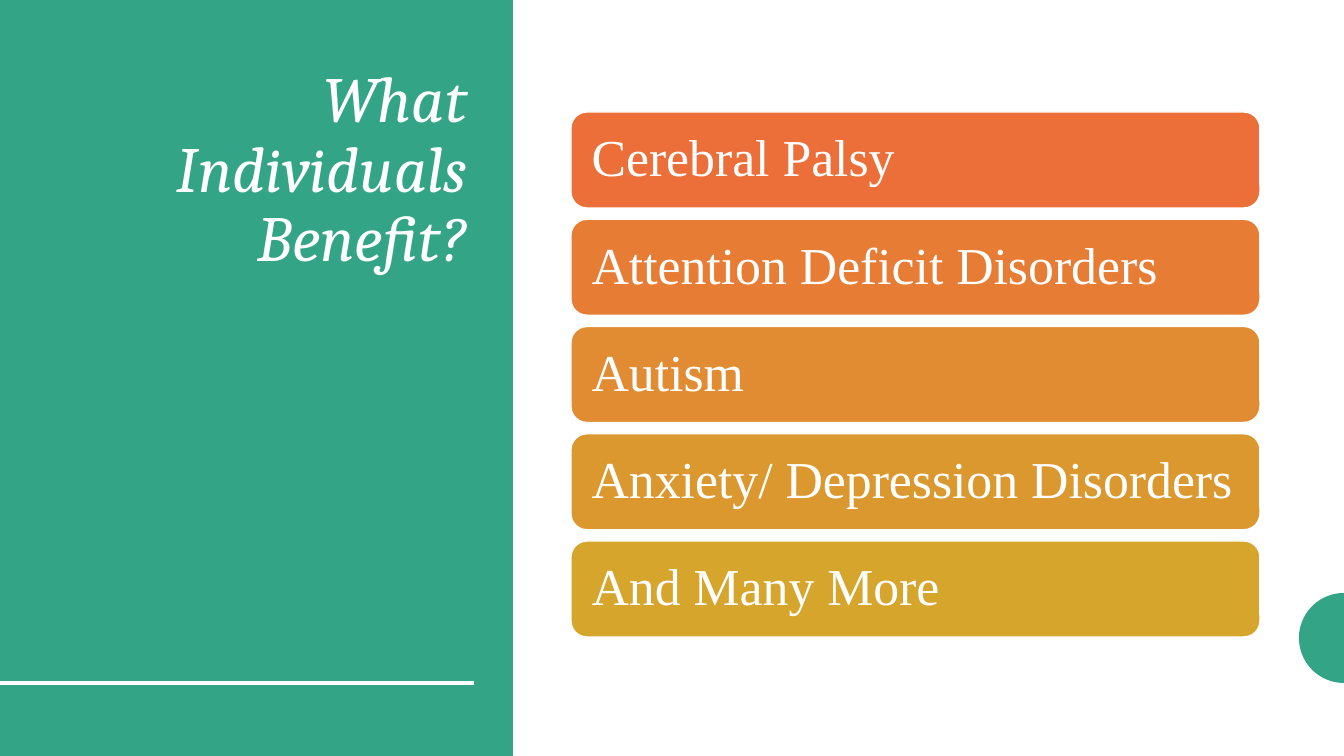
from math import cos, pi, sin

from lxml.etree import SubElement
from pptx import Presentation
from pptx.dml.color import RGBColor
from pptx.enum.shapes import MSO_CONNECTOR, MSO_SHAPE
from pptx.enum.text import MSO_ANCHOR, MSO_AUTO_SIZE, PP_ALIGN
from pptx.oxml.ns import qn
from pptx.util import Pt

EMU_PER_PX = 914400 / 100.8
SLIDE_WIDTH, SLIDE_HEIGHT = 1344, 756
GREEN, WHITE = "33A485", "FFFFFF"
TITLE_FONT = {"name": "Cambria", "size": Pt(46), "italic": True}
BAR_FONT = {"name": "Times New Roman", "size": Pt(37)}
BARS = [
    ("Cerebral Palsy", "EC6E39"),
    ("Attention Deficit Disorders", "E77C35"),
    ("Autism", "E18B32"),
    ("Anxiety/ Depression Disorders", "DB982F"),
    ("And Many More", "D5A52C"),
]
BARS_TOP, BARS_BOTTOM, BAR_HEIGHT = 112, 637, 96


def px(length):
    return round(length * EMU_PER_PX)


def box(*lengths):
    return [px(length) for length in lengths]


def rgb(color):
    return RGBColor.from_string(color)


def paint(shape, fill, outline=None):
    shape.shadow.inherit = False
    shape.fill.solid()
    shape.fill.fore_color.rgb = rgb(fill)
    if outline:
        shape.line.color.rgb = rgb(outline)
        shape.line.width = Pt(1)
    else:
        shape.line.fill.background()


def write(frame, text, font, align, anchor):
    frame.text = text
    frame.word_wrap = True
    frame.auto_size = MSO_AUTO_SIZE.NONE
    frame.vertical_anchor = anchor
    paragraph = frame.paragraphs[0]
    paragraph.alignment = align
    paragraph.line_spacing = 0.9
    run_font = paragraph.runs[0].font
    for attribute, value in font.items():
        setattr(run_font, attribute, value)
    run_font.color.rgb = rgb(WHITE)


def add_edge_half_circle(slide, center_y, radius):
    """Draw a half circle bulging inward from the right edge of the slide."""
    steps = 48
    arc = [
        (px(SLIDE_WIDTH - radius * sin(pi * step / steps)),
         px(center_y - radius * cos(pi * step / steps)))
        for step in range(steps + 1)
    ]
    builder = slide.shapes.build_freeform(*arc[0])
    builder.add_line_segments(arc[1:], close=True)
    paint(builder.convert_to_shape(), GREEN)


def add_panel(slide, width):
    panel = slide.shapes.add_shape(MSO_SHAPE.RECTANGLE, *box(0, 0, width, SLIDE_HEIGHT))
    paint(panel, GREEN)


def place_title(slide, text):
    title = slide.shapes.title
    title.left, title.top, title.width, title.height = box(84, 62, 393, 546)
    write(title.text_frame, text, TITLE_FONT, PP_ALIGN.RIGHT, MSO_ANCHOR.TOP)
    slide.shapes._spTree.append(title._element)  # bring in front of the panel


def add_rule(slide, y, width):
    rule = slide.shapes.add_connector(MSO_CONNECTOR.STRAIGHT, *box(0, y, width, y))
    rule.line.color.rgb = rgb(WHITE)
    rule.line.width = Pt(2.25)
    SubElement(rule._element.spPr, qn("a:effectLst"))


def add_bar(slide, top, text, color):
    bar = slide.shapes.add_shape(
        MSO_SHAPE.ROUNDED_RECTANGLE, *box(571, top, 689, BAR_HEIGHT))
    paint(bar, color, WHITE)
    frame = bar.text_frame
    # The rounded corners already push the text in by about 5 px a side.
    frame.margin_left = px(16)
    frame.margin_right = px(10)
    write(frame, text, BAR_FONT, PP_ALIGN.LEFT, MSO_ANCHOR.MIDDLE)


def main():
    deck = Presentation()
    deck.slide_width, deck.slide_height = box(SLIDE_WIDTH, SLIDE_HEIGHT)
    slide = deck.slides.add_slide(deck.slide_layouts.get_by_name("Title Only"))
    add_edge_half_circle(slide, center_y=638, radius=45)
    add_panel(slide, width=513)
    place_title(slide, "What Individuals Benefit?")
    add_rule(slide, y=683, width=474)
    pitch = (BARS_BOTTOM - BARS_TOP - BAR_HEIGHT) / (len(BARS) - 1)
    for index, (text, color) in enumerate(BARS):
        add_bar(slide, BARS_TOP + index * pitch, text, color)
    deck.save("out.pptx")


if __name__ == "__main__":
    main()
